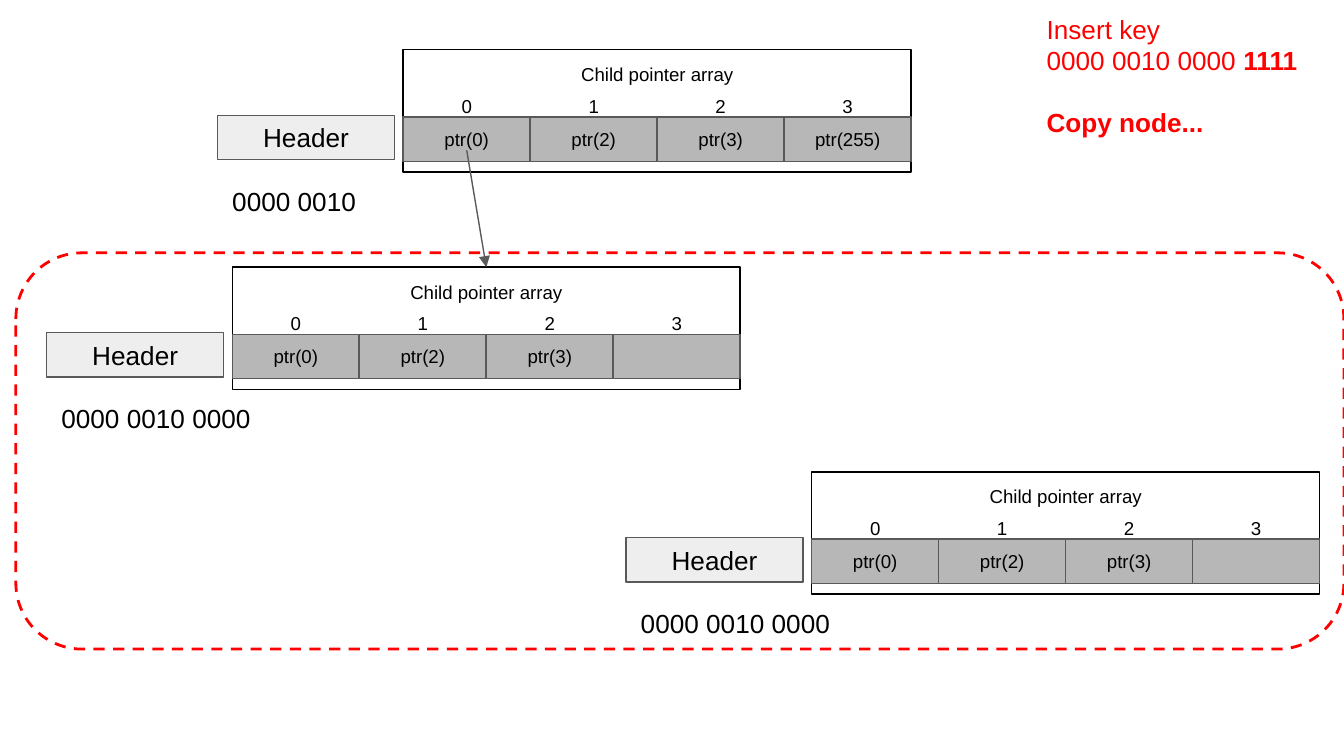
import pptx
import pptx.util
import pptx.dml.color
import pptx.enum.dml
import pptx.enum.shapes
import pptx.enum.text
import pptx.oxml.ns
import lxml.etree

Cm, Pt = pptx.util.Cm, pptx.util.Pt
SHAPE = pptx.enum.shapes.MSO_SHAPE
ANCHOR = pptx.enum.text.MSO_ANCHOR
ALIGN = pptx.enum.text.PP_ALIGN

BLACK, GREY, RED = "000000", "595959", "FF0000"
HEADER_FILL, CELL_FILL = "EEEEEE", "B7B7B7"
ARRAY_WIDTH, ARRAY_HEIGHT = 9.6, 2.31


def color(hex_value):
    return pptx.dml.color.RGBColor.from_string(hex_value)


def prepare_text(frame, anchor=ANCHOR.TOP):
    frame.word_wrap = True
    frame.vertical_anchor = anchor
    frame.margin_left = frame.margin_right = Cm(0.25)
    frame.margin_top = frame.margin_bottom = Cm(0.25)


def style_paragraph(paragraph, size, align=ALIGN.LEFT, hex_value=BLACK):
    paragraph.alignment = align
    paragraph.font.name = "Arial"
    paragraph.font.size = Pt(size)
    paragraph.font.color.rgb = color(hex_value)


def add_box(slide, box, line, fill=None, kind=SHAPE.RECTANGLE, line_width=0.75):
    outline = slide.shapes.add_shape(kind, *map(Cm, box))
    outline.shadow.inherit = False
    if fill:
        outline.fill.solid()
        outline.fill.fore_color.rgb = color(fill)
    else:
        outline.fill.background()
    outline.line.color.rgb = color(line)
    outline.line.width = Pt(line_width)
    return outline


def write(holder, words, size, align=ALIGN.CENTER, anchor=ANCHOR.TOP):
    prepare_text(holder.text_frame, anchor)
    paragraph = holder.text_frame.paragraphs[0]
    paragraph.text = words
    style_paragraph(paragraph, size, align)


def add_label(slide, box, words, size, align=ALIGN.CENTER):
    write(slide.shapes.add_textbox(*map(Cm, box)), words, size, align)


def add_node(slide, box, pointers, prefix):
    """Draw a tree node whose child pointer array fills the box."""
    left, top, width, height = box
    cell_width = width / len(pointers)

    # Array frame and header
    array = add_box(slide, box, BLACK)
    write(array, "Child pointer array", 10)
    header = add_box(slide, (left - 3.51, top + 1.24, 3.35, 0.84), GREY, HEADER_FILL)
    write(header, "Header", 14, anchor=ANCHOR.MIDDLE)

    # Pointer cells with their indexes above
    for index, pointer in enumerate(pointers):
        cell_left = left + index * cell_width
        cell = add_box(slide, (cell_left, top + 1.27, cell_width, 0.84), GREY, CELL_FILL)
        if pointer:
            write(cell, pointer, 10, anchor=ANCHOR.MIDDLE)
        index_left = cell_left + (cell_width - 1.22) / 2
        add_label(slide, (index_left, top + 0.64, 1.22, 0.64), str(index), 10)

    # Key prefix
    add_label(slide, (left - 3.48, top + height, 5.16, 1.04), prefix, 14, ALIGN.LEFT)


def add_copy_frame(slide, box):
    frame = add_box(slide, box, RED, kind=SHAPE.ROUNDED_RECTANGLE, line_width=1.5)
    frame.line.dash_style = pptx.enum.dml.MSO_LINE.DASH


def add_operation_note(slide, box):
    note = slide.shapes.add_textbox(*map(Cm, box)).text_frame
    prepare_text(note)
    title, key, action = note.paragraphs[0], note.add_paragraph(), note.add_paragraph()
    for paragraph in (title, key, action):
        style_paragraph(paragraph, 14, hex_value=RED)
    title.text = "Insert key"
    key.add_run().text = "0000 0010 0000 "
    last_byte = key.add_run()
    last_byte.text = "1111"
    last_byte.font.bold = True
    action.text = "Copy node..."
    action.font.bold = True
    action.space_before = Pt(16.5)


def add_child_arrow(slide, start, end):
    arrow = slide.shapes.add_connector(
        pptx.enum.shapes.MSO_CONNECTOR.STRAIGHT, *map(Cm, start + end))
    arrow.line.color.rgb = color(GREY)
    arrow.line.width = Pt(0.75)
    qn = pptx.oxml.ns.qn
    lxml.etree.SubElement(arrow.line._get_or_add_ln(), qn("a:tailEnd"), type="triangle")
    lxml.etree.SubElement(arrow._element.spPr, qn("a:effectLst"))


def main():
    deck = pptx.Presentation()
    deck.slide_width, deck.slide_height = Cm(25.4), Cm(14.29)
    slide = deck.slides.add_slide(deck.slide_layouts[6])

    size = (ARRAY_WIDTH, ARRAY_HEIGHT)
    parent, child, child_copy = (7.62, 0.94), (4.39, 5.05), (15.34, 8.92)
    child_pointers = ["ptr(0)", "ptr(2)", "ptr(3)", ""]
    child_prefix = "0000 0010 0000"

    add_copy_frame(slide, (0.3, 4.78, 25.1, 7.49))
    add_node(slide, parent + size, child_pointers[:3] + ["ptr(255)"], "0000 0010")
    add_operation_note(slide, (19.53, 0, 5.87, 1.57))
    add_node(slide, child + size, child_pointers, child_prefix)
    add_child_arrow(slide,
                    (parent[0] + ARRAY_WIDTH / 8, parent[1] + 1.9),
                    (child[0] + ARRAY_WIDTH / 2, child[1]))
    add_node(slide, child_copy + size, child_pointers, child_prefix)

    deck.save("out.pptx")


if __name__ == "__main__":
    main()
